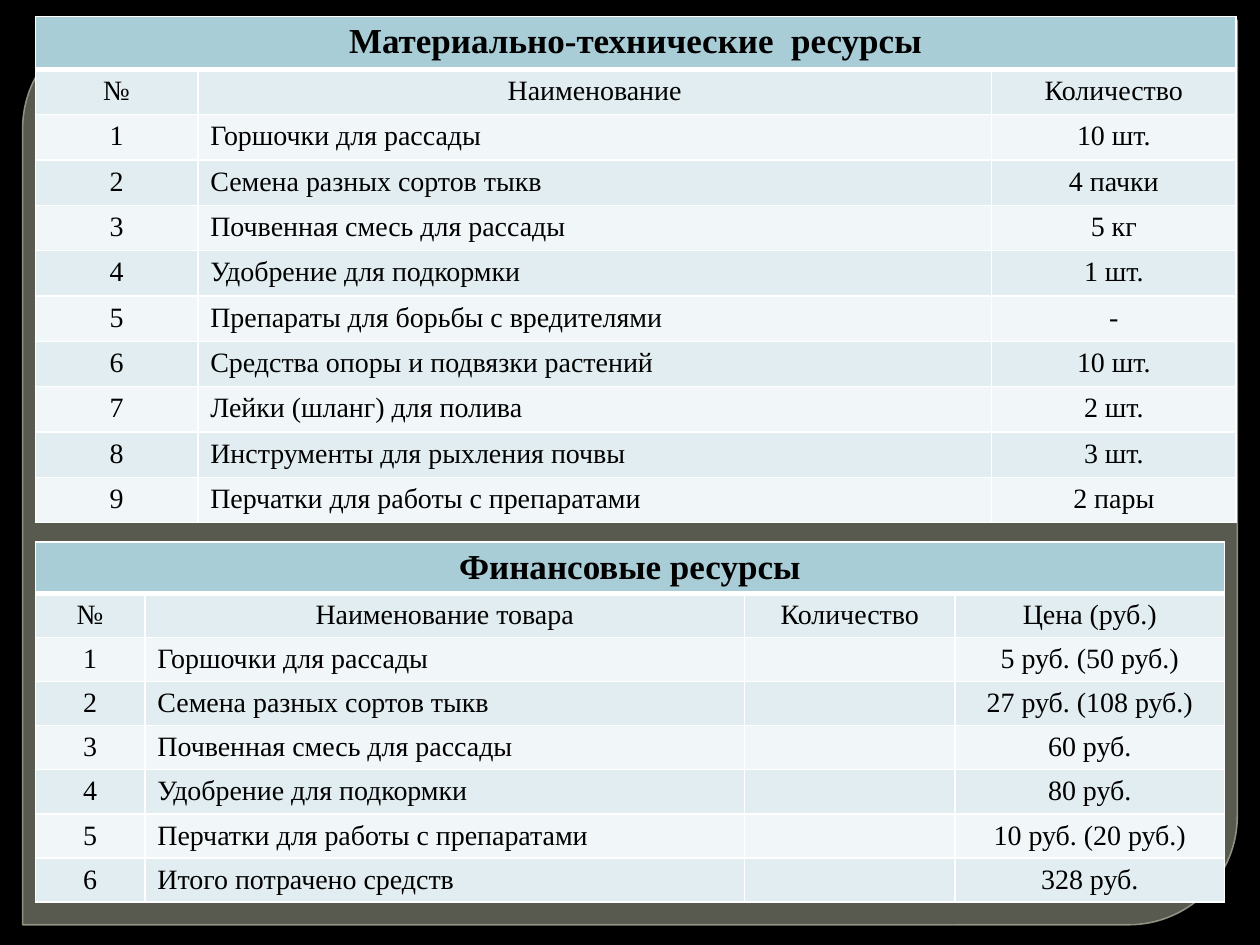
import pptx
import pptx.util
import pptx.dml.color
import pptx.enum.shapes
import pptx.enum.text
import pptx.oxml
import pptx.oxml.ns

Inches = pptx.util.Inches
COLORS = {"back": "000000", "panel": "888B7B", "edge": "9DA090", "text": "000000",
          "title": "A8CDD7", "dark": "E1EDF0", "light": "F1F6F8", "grid": "FFFFFF"}
TITLE = {"name": "Times New Roman", "size": pptx.util.Pt(20), "bold": True}
BODY = {"name": "Times New Roman", "size": pptx.util.Pt(16), "bold": False}


class ResourcePage:
    """Holds the style and the current slide, and draws its elements."""

    def __init__(self, deck, colors):
        self.colors = colors
        self.page = deck.slides.add_slide(deck.slide_layouts[6])
        self.paint(self.page.background.fill, "back")

    def paint(self, fill, color, alpha=None):
        fill.solid()
        fill.fore_color.rgb = pptx.dml.color.RGBColor.from_string(self.colors[color])
        if alpha:
            node = fill._xPr.find(".//" + pptx.oxml.ns.qn("a:srgbClr"))
            node.append(pptx.oxml.parse_xml(
                f'<a:alpha {pptx.oxml.ns.nsdecls("a")} val="{alpha * 1000}"/>'))

    def panel(self, left, top, width, height):
        box = self.page.shapes.add_shape(
            pptx.enum.shapes.MSO_SHAPE.ROUND_2_DIAG_RECTANGLE,
            Inches(left), Inches(top), Inches(width), Inches(height))
        box.shadow.inherit = False
        box.adjustments[0], box.adjustments[1] = 0.12, 0
        self.paint(box.fill, "panel", 65)
        self.paint(box.line.fill, "edge", 88)
        box.line.width = pptx.util.Pt(0.87)

    def borders(self, cell, row):
        widths = {"L": 1, "R": 1, "T": 3 if row == 1 else 1, "B": 3 if row == 0 else 1}
        for side, width in widths.items():
            cell._tc.get_or_add_tcPr().append(pptx.oxml.parse_xml(
                f'<a:ln{side} {pptx.oxml.ns.nsdecls("a")} w="{width * 12700}"><a:solidFill>'
                f'<a:srgbClr val="{self.colors["grid"]}"/></a:solidFill></a:ln{side}>'))

    def label(self, cell, text, style, centred):
        if not text:
            cell.margin_top = cell.margin_bottom = 0
            return
        para = cell.text_frame.paragraphs[0]
        if centred:
            para.alignment = pptx.enum.text.PP_ALIGN.CENTER
        span = para.add_run()
        span.text = text
        for name, value in style.items():
            setattr(span.font, name, value)
        span.font.color.rgb = pptx.dml.color.RGBColor.from_string(self.colors["text"])

    def table(self, left, top, widths, title_height, row_height, title, rows):
        rows = [[title] + [""] * (len(widths) - 1)] + rows
        heights = [title_height] + [row_height] * (len(rows) - 1)
        grid = self.page.shapes.add_table(
            len(rows), len(widths), Inches(left), Inches(top),
            Inches(sum(widths)), Inches(sum(heights))).table
        for column, width in zip(grid.columns, widths):
            column.width = Inches(width)
        for line, height in zip(grid.rows, heights):
            line.height = Inches(height)
        for row, values in enumerate(rows):
            color = "title" if row == 0 else "dark" if row % 2 else "light"
            for col, text in enumerate(values):
                cell = grid.cell(row, col)
                self.borders(cell, row)
                self.paint(cell.fill, color)
                self.label(cell, text, BODY if row else TITLE, row < 2 or col != 1)
        grid.cell(0, 0).merge(grid.cell(0, len(widths) - 1))


def main():
    deck = pptx.Presentation()
    deck.slide_width, deck.slide_height = Inches(10), Inches(7.5)
    page = ResourcePage(deck, COLORS)
    page.panel(0.18, 0.16, 9.64, 7.18)
    page.table(0.28, 0.13, [1.29, 6.3, 1.94], 0.42, 0.36, "Материально-технические  ресурсы", [
        ["№", "Наименование", "Количество"],
        ["1", "Горшочки для рассады", "10 шт."],
        ["2", "Семена разных сортов тыкв", "4 пачки"],
        ["3", "Почвенная смесь для рассады", "5 кг"],
        ["4", "Удобрение для подкормки", "1 шт."],
        ["5", "Препараты для борьбы с вредителями", "-"],
        ["6", "Средства опоры и подвязки растений", "10 шт."],
        ["7", "Лейки (шланг) для полива", "2 шт."],
        ["8", "Инструменты для рыхления почвы", "3 шт."],
        ["9", "Перчатки для работы с препаратами", "2 пары"]])
    page.table(0.28, 4.3, [0.87, 4.76, 1.67, 2.14], 0.39, 0.35, "Финансовые ресурсы", [
        ["№", "Наименование товара", "Количество", "Цена (руб.)"],
        ["1", "Горшочки для рассады", "", "5 руб. (50 руб.)"],
        ["2", "Семена разных сортов тыкв", "", "27 руб. (108 руб.)"],
        ["3", "Почвенная смесь для рассады", "", "60 руб."],
        ["4", "Удобрение для подкормки", "", "80 руб."],
        ["5", "Перчатки для работы с препаратами", "", "10 руб. (20 руб.)"],
        ["6", "Итого потрачено средств", "", "328 руб."]])
    deck.save("out.pptx")


if __name__ == "__main__":
    main()
